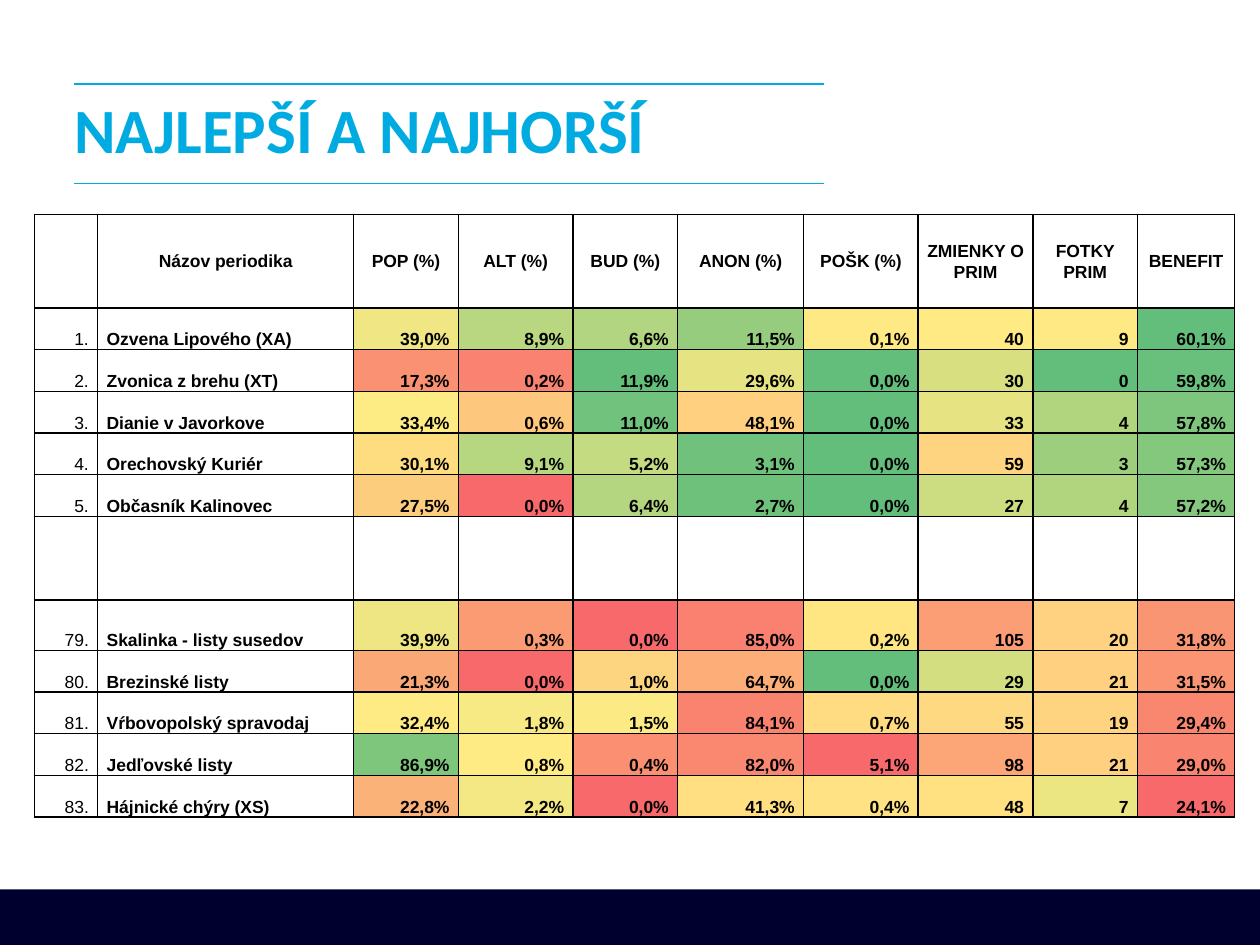
from lxml.etree import SubElement
from pptx import Presentation
from pptx.dml.color import RGBColor
from pptx.enum.shapes import MSO_CONNECTOR as Connector, MSO_SHAPE as Shape
from pptx.enum.text import MSO_ANCHOR as Anchor, MSO_AUTO_SIZE as AutoSize, PP_ALIGN as Align
from pptx.oxml.ns import qn
from pptx.util import Cm, Pt

# Content
TITLE = "NAJLEPŠÍ A NAJHORŠÍ"
HEADERS = ["", "Názov periodika", "POP (%)", "ALT (%)", "BUD (%)", "ANON (%)",
           "POŠK (%)", "ZMIENKY O PRIM", "FOTKY PRIM", "BENEFIT"]
# Rank, name, then the values and the heat colours of the eight measures
BEST = [
    ("1.", "Ozvena Lipového (XA)",
     ["39,0%", "8,9%", "6,6%", "11,5%", "0,1%", "40", "9", "60,1%"],
     "F0E784 B8D780 B1D580 95CC7D FFE984 FFEA84 FFE984 63BE7B"),
    ("2.", "Zvonica z brehu (XT)",
     ["17,3%", "0,2%", "11,9%", "29,6%", "0,0%", "30", "0", "59,8%"],
     "FA9172 F98370 63BE7B E5E382 63BE7B D8DF81 63BE7B 68C07C"),
    ("3.", "Dianie v Javorkove",
     ["33,4%", "0,6%", "11,0%", "48,1%", "0,0%", "33", "4", "57,8%"],
     "FDEB84 FDC87D 71C27C FED07F 63BE7B E5E382 B1D47F 7EC67D"),
    ("4.", "Orechovský Kuriér",
     ["30,1%", "9,1%", "5,2%", "3,1%", "0,0%", "59", "3", "57,3%"],
     "FEDD81 B6D680 C5DB81 70C17B 63BE7B FED480 9DCE7E 83C87D"),
    ("5.", "Občasník Kalinovec",
     ["27,5%", "0,0%", "6,4%", "2,7%", "0,0%", "27", "4", "57,2%"],
     "FDCD7E F8696B B5D680 6EC17B 63BE7B CBDC81 B1D47F 84C87D"),
]
WORST = [
    ("79.", "Skalinka - listy susedov",
     ["39,9%", "0,3%", "0,0%", "85,0%", "0,2%", "105", "20", "31,8%"],
     "EEE683 FA9B74 F8696B FA8170 FFE683 FB9D75 FED280 FA9573"),
    ("80.", "Brezinské listy",
     ["21,3%", "0,0%", "1,0%", "64,7%", "0,0%", "29", "21", "31,5%"],
     "FBA877 F8696B FDD47F FCAD78 63BE7B D3DE81 FED07F FA9473"),
    ("81.", "Vŕbovopolský spravodaj",
     ["32,4%", "1,8%", "1,5%", "84,1%", "0,7%", "55", "19", "29,4%"],
     "FFEB84 F7E984 FCEA84 FA8370 FFDB81 FED981 FED480 F98770"),
    ("82.", "Jedľovské listy",
     ["86,9%", "0,8%", "0,4%", "82,0%", "5,1%", "98", "21", "29,0%"],
     "7FC67D FFEB84 FA8F72 FA8871 F8696B FCA677 FED07F F98570"),
    ("83.", "Hájnické chýry (XS)",
     ["22,8%", "2,2%", "0,0%", "41,3%", "0,4%", "48", "7", "24,1%"],
     "FBB279 F3E884 F8696B FFDF82 FFE283 FFE182 EBE582 F8696B"),
]

THEME = {
    "accent": "00ABE2", "band": "00002E", "ink": "000000",
    "title_font": "Calibri", "table_font": "Arial",
    "title_size": 36, "table_size": 10, "rule": 1,
}

# Measures in centimetres
COLUMN_WIDTHS = [1.27, 5.16, 2.11, 2.31, 2.11, 2.54, 2.31, 2.31, 2.11, 1.96]
HEADER_HEIGHT, ROW_HEIGHT, GAP_HEIGHT, FIRST_WORST_HEIGHT = 1.89, 0.84, 1.69, 1.01
ROW_HEIGHTS = ([HEADER_HEIGHT] + [ROW_HEIGHT] * len(BEST) + [GAP_HEIGHT, FIRST_WORST_HEIGHT]
               + [ROW_HEIGHT] * (len(WORST) - 1))
TABLE_LEFT, TABLE_TOP = 0.7, 4.32
RULE_LEFT, RULE_RIGHT, RULE_TOPS = 1.5, 16.61, (1.69, 3.7)
BAND_TOP, BAND_HEIGHT = 17.93, 1.12


def color(code):
    return RGBColor.from_string(code)


def write(frame, text, *, font, size, ink, bold=True, align=Align.LEFT, spacing=1.0):
    para = frame.paragraphs[0]
    para.alignment = align
    para.line_spacing = spacing
    span = para.add_run()
    span.text = text
    span.font.name = font
    span.font.size = Pt(size)
    span.font.bold = bold
    span.font.color.rgb = color(ink)


def add_rule(page, top):
    rule = page.shapes.add_connector(Connector.STRAIGHT, Cm(RULE_LEFT), Cm(top),
                                     Cm(RULE_RIGHT), Cm(top))
    rule.line.color.rgb = color(THEME["accent"])
    rule.line.width = Pt(THEME["rule"])
    SubElement(rule._element.spPr, qn("a:effectLst"))


def add_borders(cell):
    properties = cell._tc.get_or_add_tcPr()
    for side in ("a:lnL", "a:lnR", "a:lnT", "a:lnB"):
        line = SubElement(properties, qn(side), w=str(Pt(THEME["rule"])))
        fill = SubElement(line, qn("a:solidFill"))
        SubElement(fill, qn("a:srgbClr"), val=THEME["ink"])


def format_cell(cell, text, *, fill=None, anchor=Anchor.BOTTOM, **text_format):
    add_borders(cell)
    if fill:
        cell.fill.solid()
        cell.fill.fore_color.rgb = color(fill)
    else:
        cell.fill.background()
    cell.margin_left = cell.margin_right = Cm(0.18)
    cell.margin_top = cell.margin_bottom = 0
    cell.vertical_anchor = anchor
    if text:
        write(cell.text_frame, text, font=THEME["table_font"], size=THEME["table_size"],
              ink=THEME["ink"], spacing=1.07, **text_format)


def add_ranking(page):
    table = page.shapes.add_table(len(ROW_HEIGHTS), len(HEADERS), Cm(TABLE_LEFT), Cm(TABLE_TOP),
                                  Cm(sum(COLUMN_WIDTHS)), Cm(sum(ROW_HEIGHTS))).table
    table.first_row = table.horz_banding = False
    for column, width in zip(table.columns, COLUMN_WIDTHS):
        column.width = Cm(width)
    for row, height in zip(table.rows, ROW_HEIGHTS):
        row.height = Cm(height)

    # Header row
    for column, text in enumerate(HEADERS):
        format_cell(table.cell(0, column), text, anchor=Anchor.MIDDLE, align=Align.CENTER)

    # Best and worst, with an empty row between them
    empty = ("", "", [""] * 8, "")
    for row, (rank, name, values, heat) in enumerate(BEST + [empty] + WORST, start=1):
        format_cell(table.cell(row, 0), rank, bold=False, align=Align.RIGHT)
        format_cell(table.cell(row, 1), name)
        fills = heat.split() or [None] * len(values)
        for column, (value, fill) in enumerate(zip(values, fills), start=2):
            format_cell(table.cell(row, column), value, fill=fill, align=Align.RIGHT)


def main():
    deck = Presentation()
    deck.slide_width, deck.slide_height = Cm(25.4), Cm(19.05)
    page = deck.slides.add_slide(deck.slide_layouts[5])

    # Footer band
    band = page.shapes.add_shape(Shape.RECTANGLE, 0, Cm(BAND_TOP), deck.slide_width,
                                 Cm(BAND_HEIGHT))
    band.shadow.inherit = False
    band.fill.solid()
    band.fill.fore_color.rgb = color(THEME["band"])
    band.line.fill.background()

    # Title between two rules
    for top in RULE_TOPS:
        add_rule(page, top)
    title = page.shapes.title
    title.left, title.top, title.width, title.height = Cm(1.5), Cm(1.57), Cm(17.6), Cm(2.21)
    frame = title.text_frame
    frame.margin_left = frame.margin_right = frame.margin_top = frame.margin_bottom = 0
    frame.vertical_anchor = Anchor.MIDDLE
    frame.auto_size = AutoSize.NONE
    frame.word_wrap = True
    write(frame, TITLE, font=THEME["title_font"], size=THEME["title_size"],
          ink=THEME["accent"], spacing=0.9)

    add_ranking(page)
    deck.save("out.pptx")


if __name__ == "__main__":
    main()
